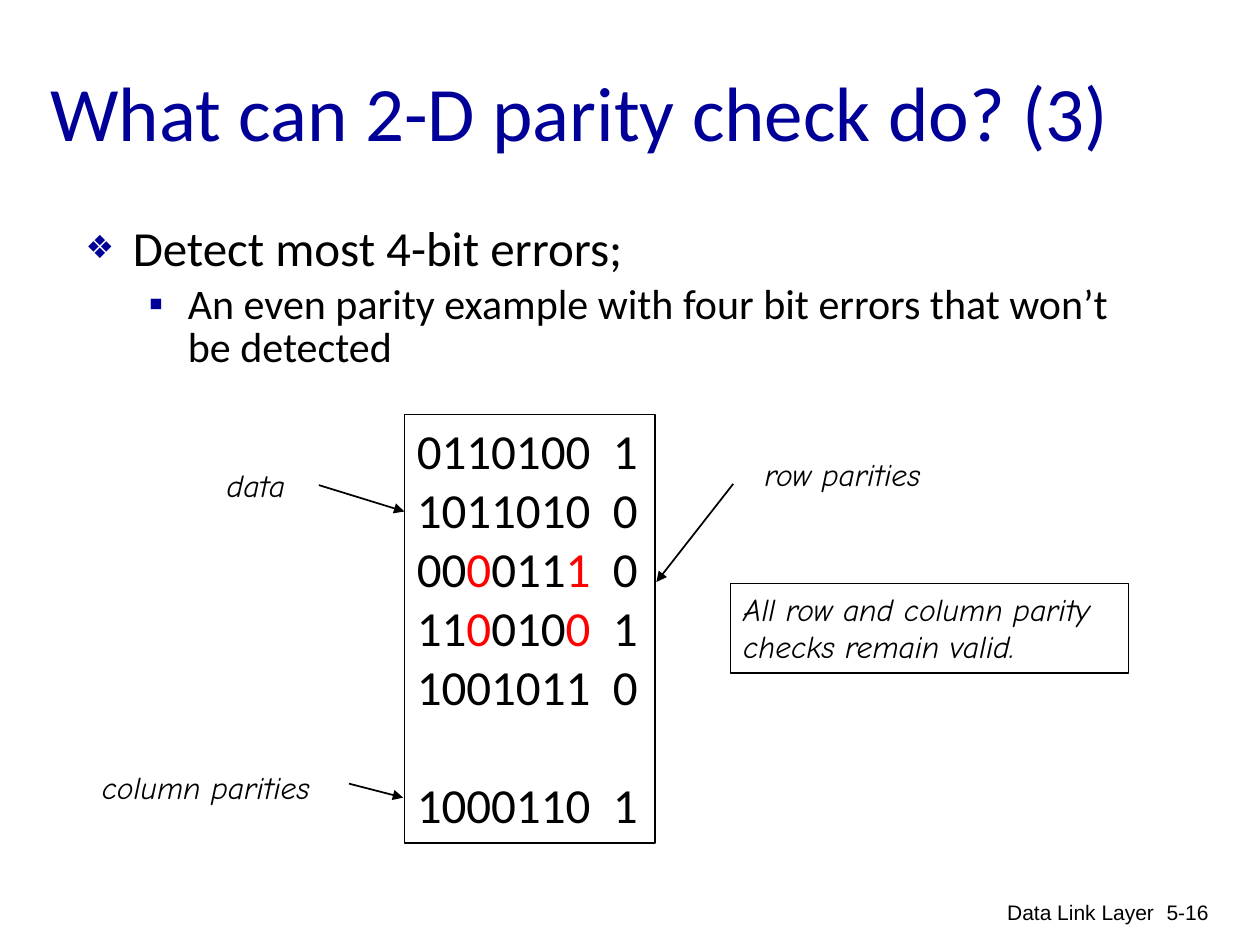
import itertools

import pptx
import pptx.dml.color
import pptx.enum.shapes
import pptx.enum.text
import pptx.oxml.ns
import pptx.util
from lxml import etree

Pt = pptx.util.Pt
ALIGN = pptx.enum.text.PP_ALIGN
ANCHOR = pptx.enum.text.MSO_ANCHOR
COLORS = {"title": "000099", "ink": "000000", "flipped": "FF0000"}


def rgb(key):
    return pptx.dml.color.RGBColor.from_string(COLORS[key])


def add_xml(parent, tag, **attributes):
    return etree.SubElement(parent, pptx.oxml.ns.qn(tag), attributes)


class ParitySlide:
    body_font = "Calibri"
    label_font = "Comic Neue"
    footer_font = "Arial"

    def __init__(self, deck):
        self.slide = deck.slides.add_slide(deck.slide_layouts[6])

    def run(self, paragraph, words, size, font, color="ink", italic=False):
        run = paragraph.add_run()
        run.text = words
        run.font.size = Pt(size)
        run.font.name = font
        run.font.italic = italic
        run.font.color.rgb = rgb(color)

    def frame(self, left, top, width, height, anchor=ANCHOR.TOP):
        box = self.slide.shapes.add_textbox(Pt(left), Pt(top), Pt(width), Pt(height))
        box.text_frame.word_wrap = True
        box.text_frame.vertical_anchor = anchor
        return box.text_frame

    def bordered(self, left, top, width, height, weight):
        box = self.slide.shapes.add_shape(
            pptx.enum.shapes.MSO_SHAPE.RECTANGLE, Pt(left), Pt(top), Pt(width), Pt(height))
        box.shadow.inherit = False
        box.fill.background()
        box.line.color.rgb = rgb("ink")
        box.line.width = Pt(weight)
        box.text_frame.word_wrap = True
        box.text_frame.vertical_anchor = ANCHOR.TOP
        return box.text_frame

    def paragraph(self, frame, align=ALIGN.LEFT):
        first = frame.paragraphs[0]
        paragraph = frame.add_paragraph() if first.runs else first
        paragraph.alignment = align
        return paragraph

    def title(self, words):
        frame = self.frame(21.6, 18, 653.8, 90, ANCHOR.MIDDLE)
        self.run(self.paragraph(frame), words, 44, self.body_font, "title")

    def bullet(self, frame, words, size, level, mark, mark_size, margin, hanging):
        paragraph = self.paragraph(frame)
        paragraph.level = level
        paragraph.line_spacing = 0.85
        paragraph.space_before = Pt(size * 0.2)
        props = paragraph._p.get_or_add_pPr()
        props.set("marL", str(Pt(margin)))
        props.set("indent", str(-Pt(hanging)))
        add_xml(add_xml(props, "a:buClr"), "a:srgbClr", val=COLORS["title"])
        add_xml(props, "a:buSzPct", val=str(mark_size * 1000))
        add_xml(props, "a:buFont", typeface=self.footer_font)
        add_xml(props, "a:buChar", char=mark)
        self.run(paragraph, words, size, self.body_font)

    def parity_grid(self, data_rows, column_row, flipped):
        frame = self.bordered(231.1, 236.9, 143.3, 244.8, 1)
        for row, (bits, parity) in enumerate(data_rows + [column_row]):
            paragraph = self.paragraph(frame)
            props = paragraph._p.get_or_add_pPr()
            add_xml(add_xml(props, "a:tabLst"), "a:tab", pos=str(Pt(112)), algn="l")
            if row == len(data_rows):
                paragraph.space_before = Pt(34)
            columns = itertools.groupby(range(len(bits)), lambda col: (row, col) in flipped)
            for is_flipped, group in columns:
                digits = "".join(bits[col] for col in group)
                self.run(paragraph, digits, 28, self.body_font, "flipped" if is_flipped else "ink")
            self.run(paragraph, "\t" + parity, 28, self.body_font)

    def label(self, frame, *lines):
        for line in lines:
            self.run(self.paragraph(frame), line, 18, self.label_font, italic=True)

    def arrow(self, x1, y1, x2, y2):
        line = self.slide.shapes.add_connector(
            pptx.enum.shapes.MSO_CONNECTOR.STRAIGHT, Pt(x1), Pt(y1), Pt(x2), Pt(y2))
        line.line.color.rgb = rgb("ink")
        line.line.width = Pt(1)
        add_xml(line.line._get_or_add_ln(), "a:tailEnd", type="triangle")
        add_xml(line._element.spPr, "a:effectLst")

    def footer(self, words, left, width):
        frame = self.frame(left, 510.5, width, 36)
        self.run(self.paragraph(frame, ALIGN.RIGHT), words, 12, self.footer_font)


def main():
    deck = pptx.Presentation()
    deck.slide_width, deck.slide_height = Pt(720), Pt(540)
    page = ParitySlide(deck)

    page.title("What can 2-D parity check do? (3)")
    claims = page.frame(41.8, 126, 612, 85)
    page.bullet(claims, "Detect most 4-bit errors;", 28, 0, "❖", 65, 27, 27)
    page.bullet(claims, "An even parity example with four bit errors that won’t be detected",
                24, 1, "▪", 100, 58.5, 22.5)
    page.footer("Data Link Layer", 438.5, 228.2)
    page.footer("5-16", 644.4, 53.3)

    data_rows = [("0110100", "1"), ("1011010", "0"), ("0000111", "0"),
                 ("1100100", "1"), ("1001011", "0")]
    flipped = set(itertools.product((2, 3), (2, 6)))
    page.parity_grid(data_rows, ("1000110", "1"), flipped)

    verdict = page.bordered(417.6, 333.4, 227.5, 51.1, 0.75)
    page.label(verdict, "All row and column parity", "checks remain valid.")

    callouts = [
        ("data", (122.4, 262.8, 52.6), (182.2, 277.2, 231.1, 292.3)),
        ("row parities", (429.8, 256.3, 115.9), (419, 276.5, 375.1, 332.6)),
        ("column parities", (51.1, 435.6, 141.8), (199.4, 447.8, 230.4, 455.8)),
    ]
    for words, (left, top, width), ends in callouts:
        page.label(page.frame(left, top, width, 28.8), words)
        page.arrow(*ends)

    deck.save("out.pptx")


if __name__ == "__main__":
    main()
